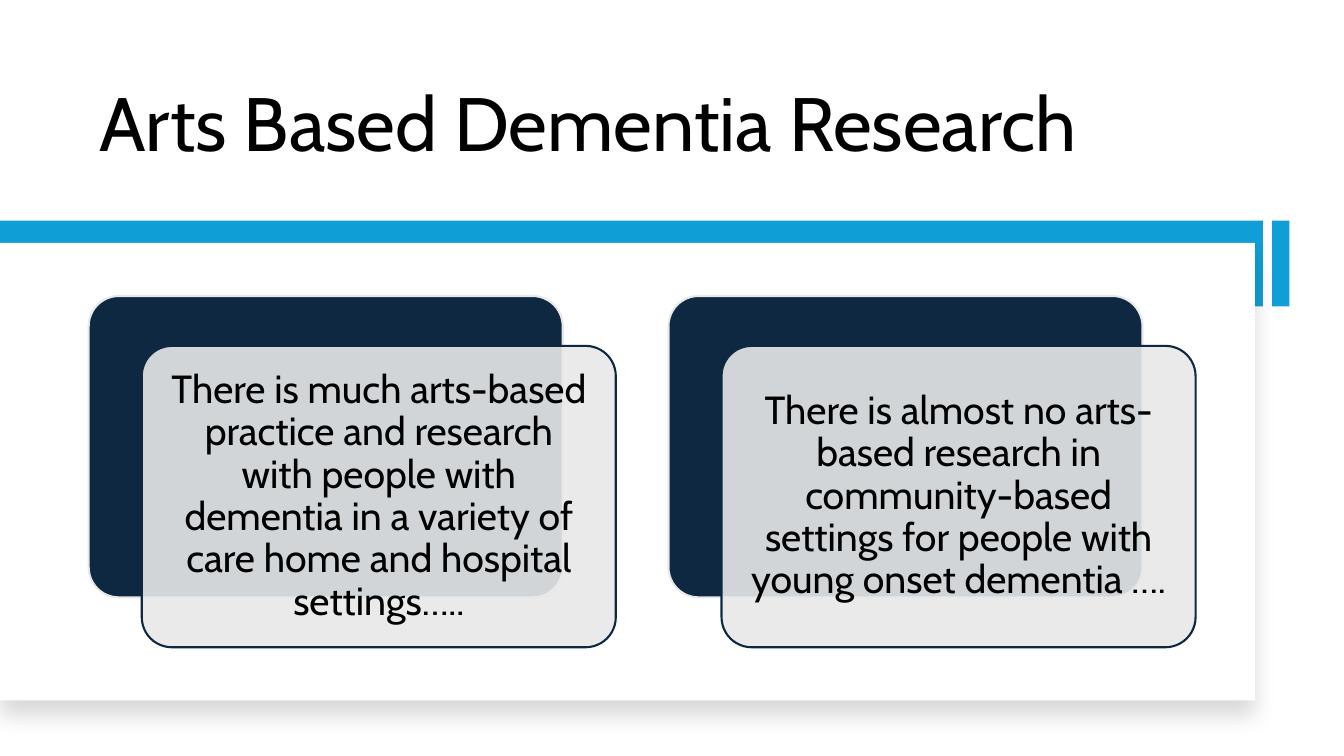
from pptx import Presentation
from pptx.dml.color import RGBColor
from pptx.enum.shapes import MSO_SHAPE as Kind
from pptx.enum.text import MSO_ANCHOR as Anchor, MSO_AUTO_SIZE as Fit, PP_ALIGN as Align
from pptx.oxml.ns import qn
from pptx.util import Inches, Pt
from lxml.etree import SubElement as Sub

FONT = "Cabin"
BLACK, WHITE = "000000", "FFFFFF"
BLUE, NAVY, PALE = "0F9ED5", "0E2841", "E8E8E8"
TEXTS = [
    "There is much arts-based practice and research with people with dementia "
    "in a variety of care home and hospital settings…..",
    "There is almost no arts- based research in community-based settings "
    "for people with young onset dementia ….",
]


def paint(tone, color):
    tone.rgb = RGBColor.from_string(color)


def write(shape, text, size=28, align=Align.CENTER, anchor=Anchor.MIDDLE, side=0.16, edge=0.12):
    frame = shape.text_frame
    frame.text = text
    frame.word_wrap = True
    frame.auto_size = Fit.NONE
    frame.vertical_anchor = anchor
    frame.margin_left = frame.margin_right = Inches(side)
    frame.margin_top = frame.margin_bottom = Inches(edge)
    para = frame.paragraphs[0]
    para.alignment = align
    para.line_spacing = 0.9
    font = para.runs[0].font
    font.name, font.size = FONT, Pt(size)
    paint(font.color, BLACK)


class Deck:
    def __init__(self):
        self.show = Presentation()
        self.show.slide_width = Inches(13.33)
        self.show.slide_height = Inches(7.5)
        self.col = self.show.slide_width / 100
        self.row = self.show.slide_height / 100
        self.slide = self.show.slides.add_slide(self.show.slide_layouts[5])

    def place(self, x, y, w, h):
        return [round(n) for n in (x * self.col, y * self.row, w * self.col, h * self.row)]

    def title(self, text, *box):
        shape = self.slide.shapes.title
        shape.left, shape.top, shape.width, shape.height = self.place(*box)
        write(shape, text, size=54, align=Align.LEFT, anchor=Anchor.BOTTOM, side=0.1, edge=0.05)

    def block(self, *box, fill, kind=Kind.RECTANGLE, line=None):
        shape = self.slide.shapes.add_shape(kind, *self.place(*box))
        shape.shadow.inherit = False
        shape.fill.solid()
        paint(shape.fill.fore_color, fill)
        if line:
            shape.line.width = Pt(1.5)
            paint(shape.line.color, line)
        else:
            shape.line.fill.background()
        return shape

    def panel(self, *box):
        shape = self.block(*box, fill=WHITE)
        effects = shape.element.spPr.find(qn("a:effectLst"))
        shade = Sub(effects, qn("a:outerShdw"), blurRad=str(Pt(15)), dist=str(Pt(11)),
                    dir="5400000", algn="t", rotWithShape="0")
        tone = Sub(shade, qn("a:srgbClr"), val=BLACK)
        Sub(tone, qn("a:alpha"), val="15000")

    def round(self, *box, fill, line):
        shape = self.block(*box, fill=fill, kind=Kind.ROUNDED_RECTANGLE, line=line)
        shape.adjustments[0] = 0.1
        return shape

    def card(self, text, x, y, w, h):
        self.round(x, y, w, h, fill=NAVY, line=PALE)
        front = self.round(x + 3.95, y + 6.6, w, h, fill=PALE, line=NAVY)
        tone = front.element.spPr.find(qn("a:solidFill"))[0]
        Sub(tone, qn("a:alpha"), val="90000")
        write(front, text)


def main():
    deck = Deck()
    deck.title("Arts Based Dementia Research", 6.63, 5.6, 75.77, 17.33)
    for left, width in ((94.65, 1.28), (0, 93.97)):
        deck.block(left, 29.2, width, 11.33, fill=BLUE)
    deck.panel(0, 32.13, 93.37, 60.53)
    for i, text in enumerate(TEXTS):
        deck.card(text, 6.6 + i * 43.14, 39.15, 35.27, 39.87)
    deck.show.save("out.pptx")


if __name__ == "__main__":
    main()
